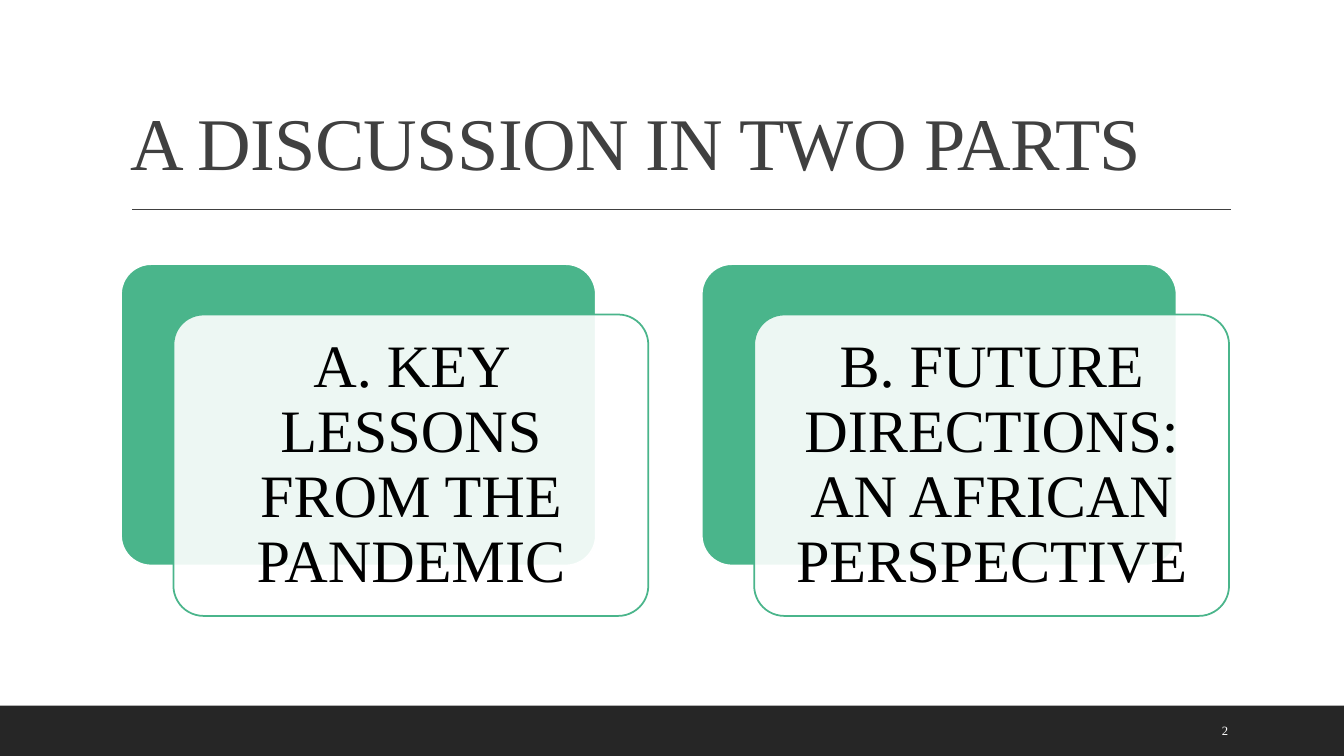
from lxml.etree import SubElement
from pptx import Presentation
from pptx.dml.color import RGBColor
from pptx.enum.shapes import MSO_CONNECTOR, MSO_SHAPE
from pptx.enum.text import MSO_ANCHOR as ANCHOR, PP_ALIGN as ALIGN
from pptx.oxml.ns import qn
from pptx.util import Inches, Pt

WHITE = RGBColor(0xFF, 0xFF, 0xFF)
BLACK = RGBColor(0, 0, 0)
GREEN = RGBColor(0x4A, 0xB5, 0x8B)
GREY = RGBColor(0x40, 0x40, 0x40)
CHARCOAL = RGBColor(0x26, 0x26, 0x26)

WIDTH, HEIGHT = Inches(13.33), Inches(7.5)
FOOTER_TOP = Inches(7)
CARDS_LEFT, CARDS_TOP = Inches(1.2), Inches(2.62)
CARD_WIDTH, CARD_HEIGHT = Inches(4.71), Inches(2.99)
CARD_STEP = Inches(5.76)
OFFSET_X, OFFSET_Y = Inches(0.52), Inches(0.5)
CARD_INSET = Inches(0.18)

PARTS = [
    "A. KEY LESSONS FROM THE PANDEMIC",
    "B. FUTURE DIRECTIONS: AN AFRICAN PERSPECTIVE",
]

deck = Presentation()
deck.slide_width, deck.slide_height = WIDTH, HEIGHT
slide = deck.slides.add_slide(deck.slide_layouts[6])
shapes = slide.shapes
slide.background.fill.solid()
slide.background.fill.fore_color.rgb = WHITE


def add_block(kind, left, top, width, height, fill, outline=None):
    block = shapes.add_shape(kind, left, top, width, height)
    block.shadow.inherit = False
    block.fill.solid()
    block.fill.fore_color.rgb = fill
    if outline is None:
        block.line.fill.background()
    else:
        block.line.color.rgb = outline
        block.line.width = Pt(1.25)
    if kind == MSO_SHAPE.ROUNDED_RECTANGLE:
        block.adjustments[0] = 0.1
    return block


def write(holder, words, size, color, anchor, align=ALIGN.LEFT, spacing=1.0):
    """Put one formatted paragraph in the holder and return its run."""
    frame = holder.text_frame
    frame.word_wrap = True
    frame.vertical_anchor = anchor
    paragraph = frame.paragraphs[0]
    paragraph.alignment = align
    paragraph.line_spacing = spacing
    run = paragraph.add_run()
    run.text = words
    run.font.color.rgb = color
    for name, value in {"name": "Times New Roman", "size": Pt(size)}.items():
        setattr(run.font, name, value)
    return run


# Heading and rule
heading = shapes.add_textbox(CARDS_LEFT, Inches(0.31), Inches(11), Inches(1.59))
heading_run = write(heading, "A DISCUSSION IN TWO PARTS", 53, GREY,
                    ANCHOR.BOTTOM, spacing=0.9)
heading_run.font._element.set("spc", "-50")

rule = shapes.add_connector(MSO_CONNECTOR.STRAIGHT, Inches(1.31), Inches(2.08),
                            Inches(12.21), Inches(2.08))
rule.line.color.rgb = GREY
rule.line.width = Pt(1)
SubElement(rule._element.spPr, qn("a:effectLst"))

# Footer band with the page number
add_block(MSO_SHAPE.RECTANGLE, 0, FOOTER_TOP, WIDTH, HEIGHT - FOOTER_TOP, CHARCOAL)
page_number = shapes.add_textbox(Inches(12.02), Inches(7.05), Inches(0.85), Inches(0.4))
write(page_number, "2", 9, WHITE, ANCHOR.MIDDLE)

# The two parts: a green card behind a translucent white one
for column, part in enumerate(PARTS):
    left = CARDS_LEFT + column * CARD_STEP
    add_block(MSO_SHAPE.ROUNDED_RECTANGLE, left, CARDS_TOP,
              CARD_WIDTH, CARD_HEIGHT, GREEN, WHITE)
    card = add_block(MSO_SHAPE.ROUNDED_RECTANGLE, left + OFFSET_X, CARDS_TOP + OFFSET_Y,
                     CARD_WIDTH, CARD_HEIGHT, WHITE, GREEN)
    card_color = card._element.spPr.find(qn("a:solidFill")).find(qn("a:srgbClr"))
    SubElement(card_color, qn("a:alpha"), val="90000")
    for side in ("left", "top", "right", "bottom"):
        setattr(card.text_frame, f"margin_{side}", CARD_INSET)
    write(card, part, 43, BLACK, ANCHOR.MIDDLE, ALIGN.CENTER, 0.9)

deck.save("out.pptx")
